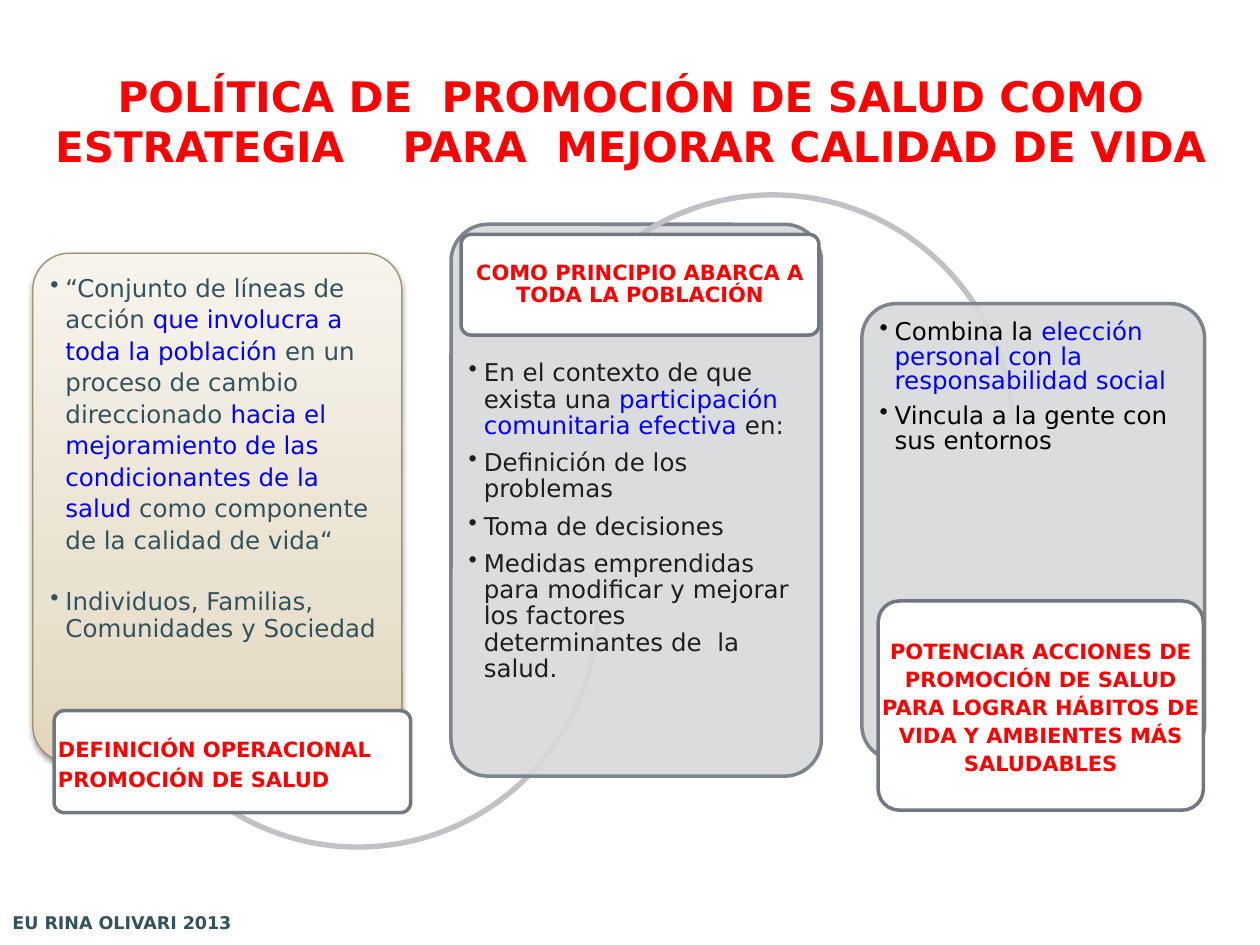
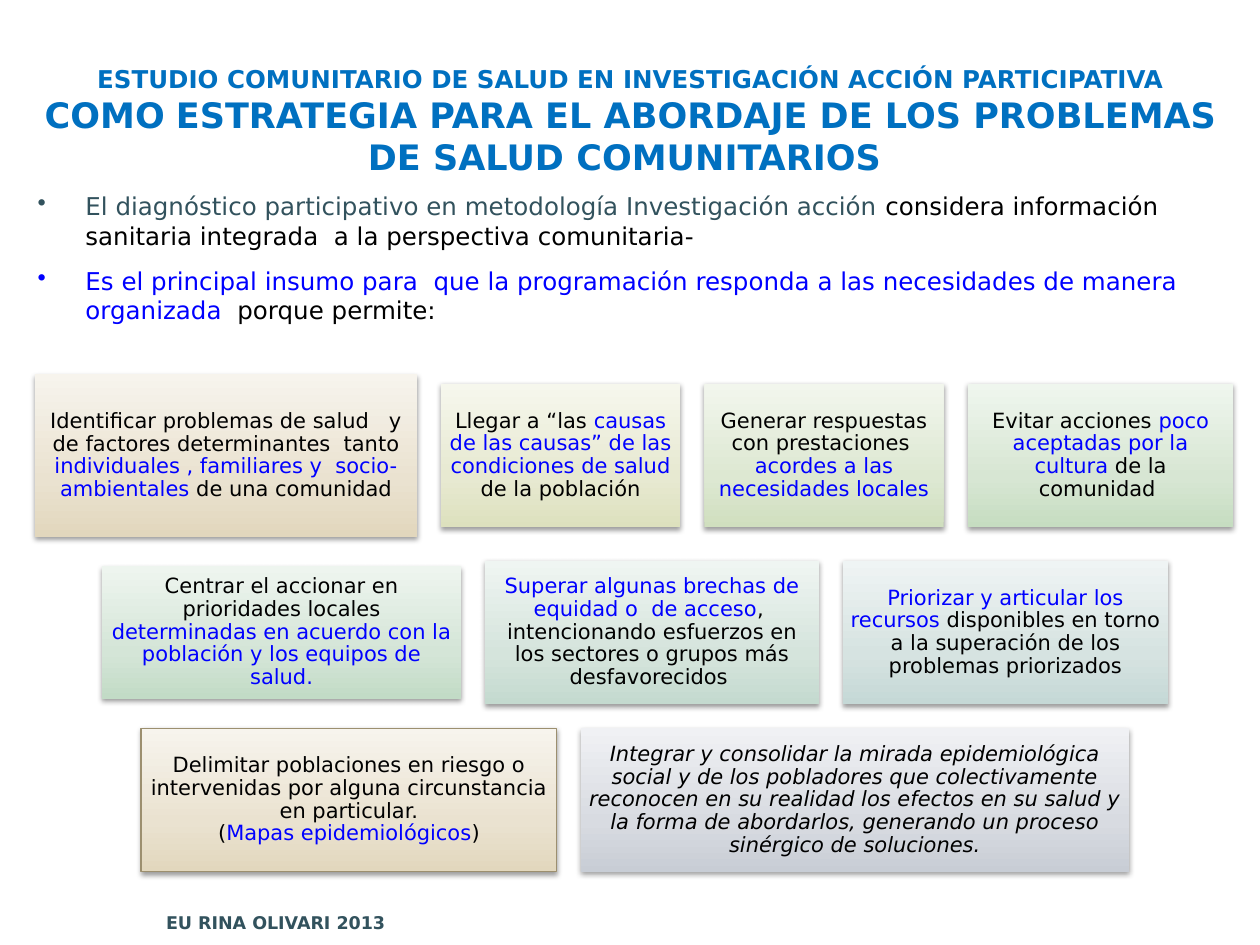
"""Two slides on health promotion policy and participatory community study."""
from lxml import etree
from pptx import Presentation, util as u
from pptx.dml.color import RGBColor
from pptx.enum import shapes, text
from pptx.oxml.ns import qn

FONT = "DejaVu Sans"
RED, BLUE, SKY, TEAL = "FF0000", "0000FF", "0070C0", "32525D"
BLACK, INK, WHITE = "000000", "1E1E1E", "FFFFFF"
PANEL, PANEL_EDGE, LABEL_EDGE, ARROW = "D8D9DB", "7E848D", "727880", "C0C2C5"
SAND, SAND_EDGE = ("E2D7BD", "EAE2D0", "F7F4ED"), "9C8F6F"
STOPS = (0, 35, 100)
LEFT, CENTER = text.PP_ALIGN.LEFT, text.PP_ALIGN.CENTER
TOP, MIDDLE = text.MSO_ANCHOR.TOP, text.MSO_ANCHOR.MIDDLE
Kind = shapes.MSO_SHAPE

deck = Presentation()
deck.slide_width, deck.slide_height = u.Inches(10), u.Inches(7.5)
COLUMN, ROW = deck.slide_width / 100, deck.slide_height / 75
rgb = RGBColor.from_string


def draw(page, place, kind=None, fill=None, line=None, weight=2, alpha=None, adjust=()):
    """Add a shape, or a text box when no kind is given, at a grid place."""
    left, top, width, height = place
    frame = [round(n) for n in (left * COLUMN, top * ROW, width * COLUMN, height * ROW)]
    if kind is None:
        return page.shapes.add_textbox(*frame)
    shape = page.shapes.add_shape(kind, *frame)
    shape.shadow.inherit = False
    for index, value in enumerate(adjust):
        shape.adjustments[index] = value
    if line:
        shape.line.color.rgb = rgb(line)
        shape.line.width = u.Pt(weight)
    else:
        shape.line.fill.background()
    properties = shape._element.spPr
    if isinstance(fill, tuple):
        shape.fill.gradient()
        shape.fill.gradient_angle = 90
        stops = properties.find(".//" + qn("a:gsLst"))
        for stop in list(stops):
            stops.remove(stop)
        for share, tone in zip(STOPS, fill):
            stop = etree.SubElement(stops, qn("a:gs"), pos=str(share * 1000))
            etree.SubElement(stop, qn("a:srgbClr"), val=tone)
        effects = properties.find(qn("a:effectLst"))
        shade = etree.SubElement(effects, qn("a:outerShdw"), blurRad=str(u.Pt(3.1)),
                                 dist=str(u.Pt(1.6)), dir="5400000", rotWithShape="0")
        tone = etree.SubElement(shade, qn("a:srgbClr"), val=BLACK)
        etree.SubElement(tone, qn("a:alpha"), val="38000")
    else:
        shape.fill.solid()
        shape.fill.fore_color.rgb = rgb(fill)
        if alpha:
            tone = properties.find(qn("a:solidFill")).find(qn("a:srgbClr"))
            etree.SubElement(tone, qn("a:alpha"), val=str(alpha * 1000))
    return shape


def write(box, paragraphs, size, bold=False, italic=False, align=LEFT, anchor=TOP,
          insets=(0.1, 0.05), spacing=None, after=0, before=0, hang=0):
    """Fill a box with paragraphs, each a list of (text, colour) spans."""
    frame = box.text_frame
    frame.word_wrap = True
    frame.vertical_anchor = anchor
    frame.margin_left = frame.margin_right = u.Inches(insets[0])
    frame.margin_top = frame.margin_bottom = u.Inches(insets[1])
    for number, spans in enumerate(paragraphs):
        para = frame.add_paragraph() if number else frame.paragraphs[0]
        if hang:
            settings = para._p.get_or_add_pPr()
            settings.set("marL", str(u.Inches(hang)))
            settings.set("indent", str(-u.Inches(hang)))
            etree.SubElement(settings, qn("a:buChar"), char="•")
        para.alignment = align
        if spacing:
            para.line_spacing = spacing
        if number:
            para.space_before = u.Pt(before)
        para.space_after = u.Pt(after if number < len(paragraphs) - 1 else 0)
        for words, colour in spans:
            span = para.add_run()
            span.text = words
            span.font.name, span.font.size = FONT, u.Pt(size)
            span.font.bold, span.font.italic = bold, italic
            span.font.color.rgb = rgb(colour)
    return frame


blank = deck.slide_layouts[6]
policy, study = [deck.slides.add_slide(blank) for _ in range(2)]

for page, left, width in ((policy, 0, 31.1), (study, 12.2, 71.7)):
    footer = draw(page, (left, 71.4, width, 3.6), Kind.RECTANGLE, WHITE, alpha=33)
    write(footer, [[("EU RINA OLIVARI 2013", TEAL)]], 10, bold=True, anchor=MIDDLE)

title = write(draw(policy, (2, 6.8, 96.1, 9.5)), [[(
    "POLÍTICA DE  PROMOCIÓN DE SALUD COMO ESTRATEGIA    PARA  MEJORAR CALIDAD DE VIDA",
    RED)]], 24, bold=True, align=CENTER, anchor=MIDDLE)
title.margin_bottom = u.Inches(0.44)

definition = [
    [("“Conjunto de líneas de acción ", TEAL), ("que involucra a toda la población ", BLUE),
     ("en un proceso de cambio direccionado ", TEAL),
     ("hacia el mejoramiento de las condicionantes de la salud ", BLUE),
     ("como componente de la calidad de vida“", TEAL)],
    [("Individuos, Familias, Comunidades y Sociedad", TEAL)]]
context = [
    [("En el contexto de que exista una ", INK),
     ("participación comunitaria efectiva ", BLUE), ("en:", INK)],
    [("Definición de los problemas", INK)],
    [("Toma de decisiones", INK)],
    [("Medidas emprendidas para modificar y mejorar los factores determinantes de  la salud.",
      INK)]]
choice = [
    [("Combina la ", BLACK), ("elección personal con la responsabilidad social", BLUE)],
    [("Vincula a la gente con sus entornos", BLACK)]]

panels = [
    dict(place=(2.6, 20.1, 29.3, 40.4), fill=SAND, line=SAND_EDGE, weight=0.75, alpha=None,
         text_top=20.1, body=definition, spacing=u.Pt(18), after=20,
         arrow=(Kind.LEFT_CIRCULAR_ARROW, (8.9, 28.7, 39, 39),
                (0.011, 1.238, 1.502, 72.754, 0.012)),
         label=(4.3, 56.4, 28.3, 8.1), align=LEFT, label_spacing=u.Pt(17),
         heading=["DEFINICIÓN OPERACIONAL", "PROMOCIÓN DE SALUD"]),
    dict(place=(35.8, 17.8, 29.4, 43.8), fill=PANEL, line=PANEL_EDGE, weight=2, alpha=90,
         text_top=27.2, body=context, spacing=0.9, after=6,
         arrow=(Kind.CIRCULAR_ARROW, (41.8, 15, 39.1, 39.1),
                (0.011, 1.235, 213.169, 141.914, 0.012)),
         label=(36.6, 18.6, 28.4, 8), align=CENTER, label_spacing=0.9,
         heading=["COMO PRINCIPIO ABARCA A TODA LA POBLACIÓN"]),
    dict(place=(68.4, 24.1, 27.2, 36.2), fill=PANEL, line=PANEL_EDGE, weight=2, alpha=90,
         text_top=24.1, body=choice, spacing=u.Pt(14), after=6, arrow=None,
         label=(69.7, 47.7, 25.8, 16.6), align=CENTER, label_spacing=u.Pt(16),
         heading=["POTENCIAR ACCIONES DE PROMOCIÓN DE SALUD PARA LOGRAR HÁBITOS DE VIDA "
                  "Y AMBIENTES MÁS SALUDABLES"])]

for panel in panels:
    left, top, width, height = panel["place"]
    draw(policy, panel["place"], Kind.ROUNDED_RECTANGLE, panel["fill"], panel["line"],
         panel["weight"], panel["alpha"], adjust=(0.1,))
    body_place = (left, panel["text_top"], width, top + height - panel["text_top"])
    body = write(draw(policy, body_place), panel["body"], 14, insets=(0.14, 0.14),
                 spacing=panel["spacing"], after=panel["after"], hang=0.12)
    if panel["body"] is definition:
        body.paragraphs[1].line_spacing = 0.9
    if panel["arrow"]:
        kind, place, bend = panel["arrow"]
        draw(policy, place, kind, ARROW, adjust=bend)
    draw(policy, panel["label"], Kind.ROUNDED_RECTANGLE, WHITE, LABEL_EDGE, adjust=(0.1,))
    write(draw(policy, panel["label"]), [[(words, RED)] for words in panel["heading"]], 12,
          bold=True, align=panel["align"], anchor=MIDDLE, insets=(0.03, 0.02),
          spacing=panel["label_spacing"])

title = write(draw(study, (2, 5.2, 96.1, 8.7)), [[
    ("ESTUDIO COMUNITARIO DE SALUD EN INVESTIGACIÓN ACCIÓN PARTICIPATIVA ", SKY),
    ("COMO", SKY), (" ", SKY),
    ("ESTRATEGIA PARA EL ABORDAJE DE LOS PROBLEMAS DE SALUD COMUNITARIOS ", SKY)]],
    20, bold=True, align=CENTER, anchor=MIDDLE)
title.paragraphs[0].runs[0].font.size = u.Pt(14)
title.paragraphs[0].runs[2].font.size = u.Pt(18)

write(draw(study, (2, 14.7, 96.1, 17.3)), [
    [("El diagnóstico participativo en metodología Investigación acción ", TEAL),
     ("considera información sanitaria integrada  a la perspectiva comunitaria-", BLACK)],
    [("Es el principal insumo para  que la programación responda a las necesidades "
      "de manera organizada ", BLUE), (" porque permite:", BLACK)]],
    14, after=6, before=3, hang=0.38)

GAP = 1.9
benefit_rows = [
    (2.8, [
        (30.3, 12.9, SAND, [[
            ("Identificar problemas de salud   y de factores determinantes  tanto ", BLACK),
            ("individuales , familiares y  socio-ambientales ", BLUE),
            ("de una comunidad", BLACK)]]),
        (19, 11.4, ("DDE1BE", "E7E9D1", "F6F7ED"), [[
            ("Llegar a “las ", BLACK),
            ("causas de las causas” de las condiciones de salud ", BLUE),
            ("de la población", BLACK)]]),
        (19, 11.4, ("D0DFBF", "DDE8D2", "F2F6ED"), [[
            (" Generar respuestas  con prestaciones  ", BLACK),
            ("acordes a las necesidades locales", BLUE)]]),
        (21.1, 11.4, ("C6DDC1", "D7E6D3", "EFF6EE"), [[
            ("Evitar acciones ", BLACK), ("poco aceptadas por la cultura", BLUE),
            (" de la comunidad ", BLACK)]])]),
    (8.1, [
        (28.5, 10.5, ("C2DBC6", "D4E5D7", "EEF5EF"), [[
            ("Centrar el accionar en prioridades locales ", BLACK),
            ("determinadas en acuerdo con la población y los equipos de salud.", BLUE)]]),
        (26.5, 11.4, ("C4DACF", "D5E4DC", "EFF5F2"), [[
            ("Superar algunas brechas de equidad o  de acceso", BLUE),
            (",  intencionando esfuerzos en los sectores o grupos más desfavorecidos ",
             BLACK)]]),
        (25.8, 11.4, ("C5D8D6", "D6E3E1", "EFF4F4"), [[
            ("Priorizar y articular los recursos ", BLUE),
            ("disponibles en torno a la superación de los problemas priorizados", BLACK)]])]),
    (11.2, [
        (33, 11.4, SAND, [
            [("Delimitar poblaciones en riesgo o intervenidas por alguna circunstancia "
              "en particular.", BLACK)],
            [(" (", BLACK), ("Mapas epidemiológicos", BLUE), (") ", BLACK)]]),
        (43.5, 11.4, ("C8CDD5", "D8DBE1", "F0F1F4"), [[
            ("Integrar y consolidar la mirada epidemiológica social y de los pobladores que "
             "colectivamente reconocen en su realidad los efectos en su salud y la forma de "
             "abordarlos, generando un proceso sinérgico de soluciones.", BLACK)]])])]

row_top = 29.7
for row, (left, benefits) in enumerate(benefit_rows):
    row_height = max(benefit[1] for benefit in benefits)
    for width, height, tones, paragraphs in benefits:
        place = (left, row_top + (row_height - height) / 2, width, height)
        edge = SAND_EDGE if row == 2 and tones == SAND else None
        card = draw(study, place, Kind.RECTANGLE, tones, edge, weight=0.75)
        closing = row == 2 and tones != SAND
        write(card, paragraphs, 12, italic=closing, align=CENTER, anchor=MIDDLE,
              insets=(0.05, 0.05), spacing=0.9)
        left += width + GAP
    row_top += row_height + GAP

deck.save("out.pptx")
